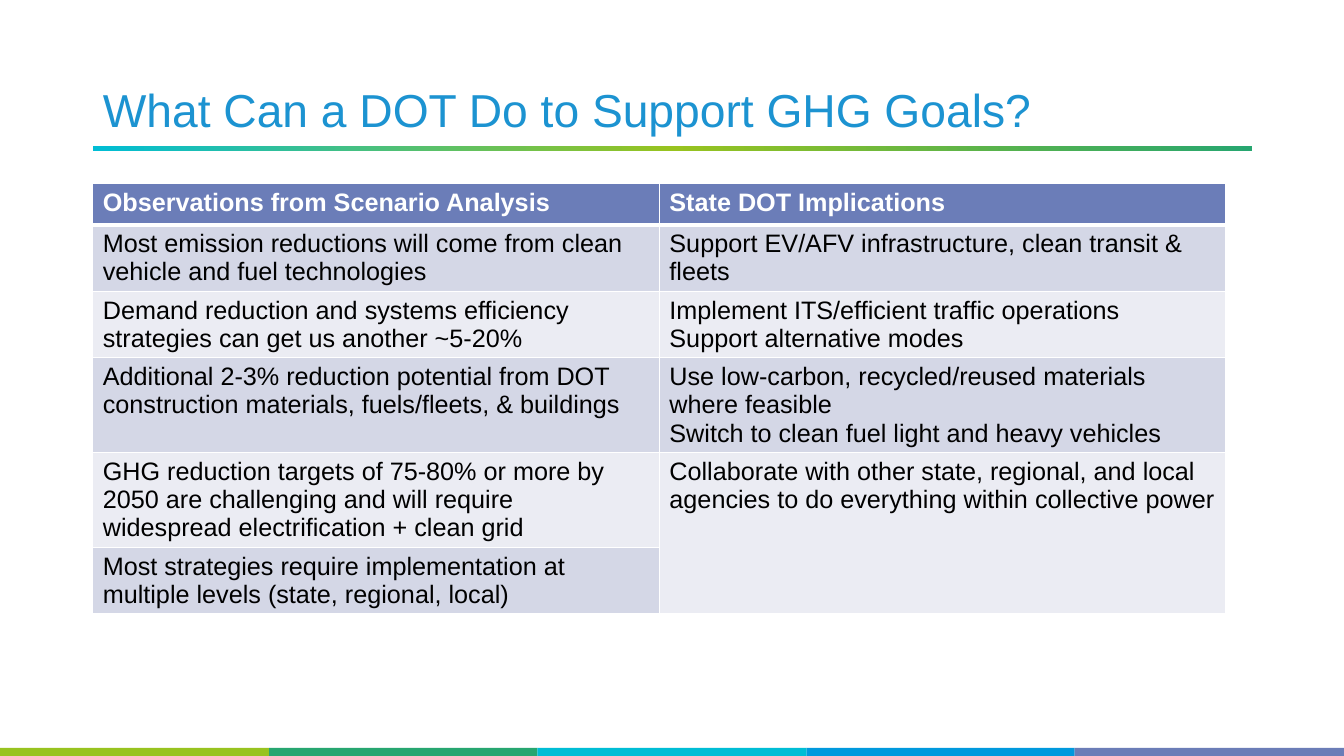
from copy import deepcopy
from dataclasses import dataclass
from typing import Any

from lxml.etree import SubElement
from pptx import Presentation
from pptx.dml.color import RGBColor
from pptx.enum.shapes import MSO_SHAPE
from pptx.enum.text import MSO_ANCHOR, MSO_AUTO_SIZE, PP_ALIGN
from pptx.oxml.ns import qn
from pptx.util import Emu, Pt

EMU_PER_PX = 9144
SLIDE_WIDTH = 1333
SLIDE_HEIGHT = 750


@dataclass(frozen=True)
class Theme:
    font: str = "Arial"
    title_size: int = 33
    table_size: int = 18
    title: str = "1C93D1"
    header: str = "6B7DB8"
    bands: tuple[str, ...] = ("D4D7E6", "EBECF3")
    light: str = "FFFFFF"
    dark: str = "000000"
    rule: tuple[str, ...] = ("00BDD5", "98C31F", "27A670")
    footer: tuple[str, ...] = ("98C31F", "27A670", "00BDD5", "0199DD", "6B7DB7")


@dataclass(frozen=True)
class Box:
    left: int
    top: int
    width: int
    height: int

    def emu(self) -> tuple[Emu, ...]:
        return tuple(px(value) for value in (self.left, self.top, self.width, self.height))


@dataclass(frozen=True)
class Finding:
    height: int
    observation: str
    implication: str


THEME = Theme()
TITLE_BOX = Box(92, 11, 1150, 130)
RULE_BOX = Box(92, 145, 1150, 5)
TABLE_BOX = Box(92, 182, 1124, 427)
FOOTER_TOP = 742

FINDINGS = (
    Finding(41, "Observations from Scenario Analysis", "State DOT Implications"),
    Finding(66, "Most emission reductions will come from clean vehicle and fuel technologies",
            "Support EV/AFV infrastructure, clean transit & fleets"),
    Finding(66, "Demand reduction and systems efficiency strategies can get us another ~5-20%",
            "Implement ITS/efficient traffic operations\nSupport alternative modes"),
    Finding(94, "Additional 2-3% reduction potential from DOT construction materials, "
                "fuels/fleets, & buildings",
            "Use low-carbon, recycled/reused materials where feasible\n"
            "Switch to clean fuel light and heavy vehicles"),
    Finding(94, "GHG reduction targets of 75-80% or more by 2050 are challenging and will "
                "require widespread electrification + clean grid",
            "Collaborate with other state, regional, and local agencies to do everything "
            "within collective power"),
    Finding(66, "Most strategies require implementation at multiple levels "
                "(state, regional, local)", ""),
)


def px(value: int) -> Emu:
    return Emu(value * EMU_PER_PX)


def apply(target: Any, values: dict[str, Any]) -> None:
    for name, value in values.items():
        setattr(target, name, value)


def format_font(font: Any, size: int, color: str, bold: bool = False) -> None:
    apply(font, {"name": THEME.font, "size": Pt(size), "bold": bold})
    font.color.rgb = RGBColor.from_string(color)


def add_bar(slide: Any, box: Box, colors: tuple[str, ...]) -> None:
    shape = slide.shapes.add_shape(MSO_SHAPE.RECTANGLE, *box.emu())
    shape.shadow.inherit = False
    shape.line.fill.background()
    if len(colors) == 1:
        shape.fill.solid()
        shape.fill.fore_color.rgb = RGBColor.from_string(colors[0])
        return
    shape.fill.gradient()
    shape.fill.gradient_angle = 0
    stop_list = shape._element.spPr.find(".//" + qn("a:gsLst"))
    stop_list.insert(1, deepcopy(stop_list[0]))
    for index, (stop, color) in enumerate(zip(shape.fill.gradient_stops, colors)):
        stop.position = index / (len(colors) - 1)
        stop.color.rgb = RGBColor.from_string(color)


def add_title(slide: Any, text: str) -> None:
    title = slide.shapes.title
    apply(title, dict(zip(("left", "top", "width", "height"), TITLE_BOX.emu())))
    frame = title.text_frame
    apply(frame, {"text": text, "word_wrap": True, "auto_size": MSO_AUTO_SIZE.NONE,
                  "vertical_anchor": MSO_ANCHOR.BOTTOM})
    paragraph = frame.paragraphs[0]
    apply(paragraph, {"alignment": PP_ALIGN.LEFT, "line_spacing": 0.9})
    format_font(paragraph.font, THEME.title_size, THEME.title)


def add_borders(cell: Any, widths: dict[str, int]) -> None:
    properties = cell._tc.get_or_add_tcPr()
    for index, (side, width) in enumerate(widths.items()):
        line = SubElement(properties, qn(f"a:ln{side}"), w=str(Pt(width)))
        fill = SubElement(line, qn("a:solidFill"))
        SubElement(fill, qn("a:srgbClr"), val=THEME.light)
        properties.insert(index, line)


def format_cell(cell: Any, row: int, text: str, band: str) -> None:
    cell.text = text
    cell.fill.solid()
    cell.fill.fore_color.rgb = RGBColor.from_string(band)
    is_header = row == 0
    for paragraph in cell.text_frame.paragraphs:
        format_font(paragraph.font, THEME.table_size,
                    THEME.light if is_header else THEME.dark, is_header)
    add_borders(cell, {"L": 1, "R": 1, "T": 3 if row == 1 else 1, "B": 3 if is_header else 1})


def add_findings(slide: Any) -> None:
    table = slide.shapes.add_table(len(FINDINGS), 2, *TABLE_BOX.emu()).table
    for column in table.columns:
        column.width = px(TABLE_BOX.width // 2)
    for row, finding in enumerate(FINDINGS):
        table.rows[row].height = px(finding.height)
        band = THEME.bands[(row - 1) % 2] if row else THEME.header
        for column, text in enumerate((finding.observation, finding.implication)):
            format_cell(table.cell(row, column), row, text, band)
    last = len(FINDINGS) - 1
    table.cell(last - 1, 1).merge(table.cell(last, 1))


def main() -> None:
    presentation = Presentation()
    apply(presentation, {"slide_width": px(SLIDE_WIDTH), "slide_height": px(SLIDE_HEIGHT)})
    slide = presentation.slides.add_slide(presentation.slide_layouts.get_by_name("Title Only"))
    add_bar(slide, RULE_BOX, THEME.rule)
    count = len(THEME.footer)
    edges = [round(index * SLIDE_WIDTH / count) for index in range(count + 1)]
    for left, right, color in zip(edges, edges[1:], THEME.footer):
        add_bar(slide, Box(left, FOOTER_TOP, right - left, SLIDE_HEIGHT - FOOTER_TOP), (color,))
    add_title(slide, "What Can a DOT Do to Support GHG Goals?")
    add_findings(slide)
    presentation.save("out.pptx")


if __name__ == "__main__":
    main()
